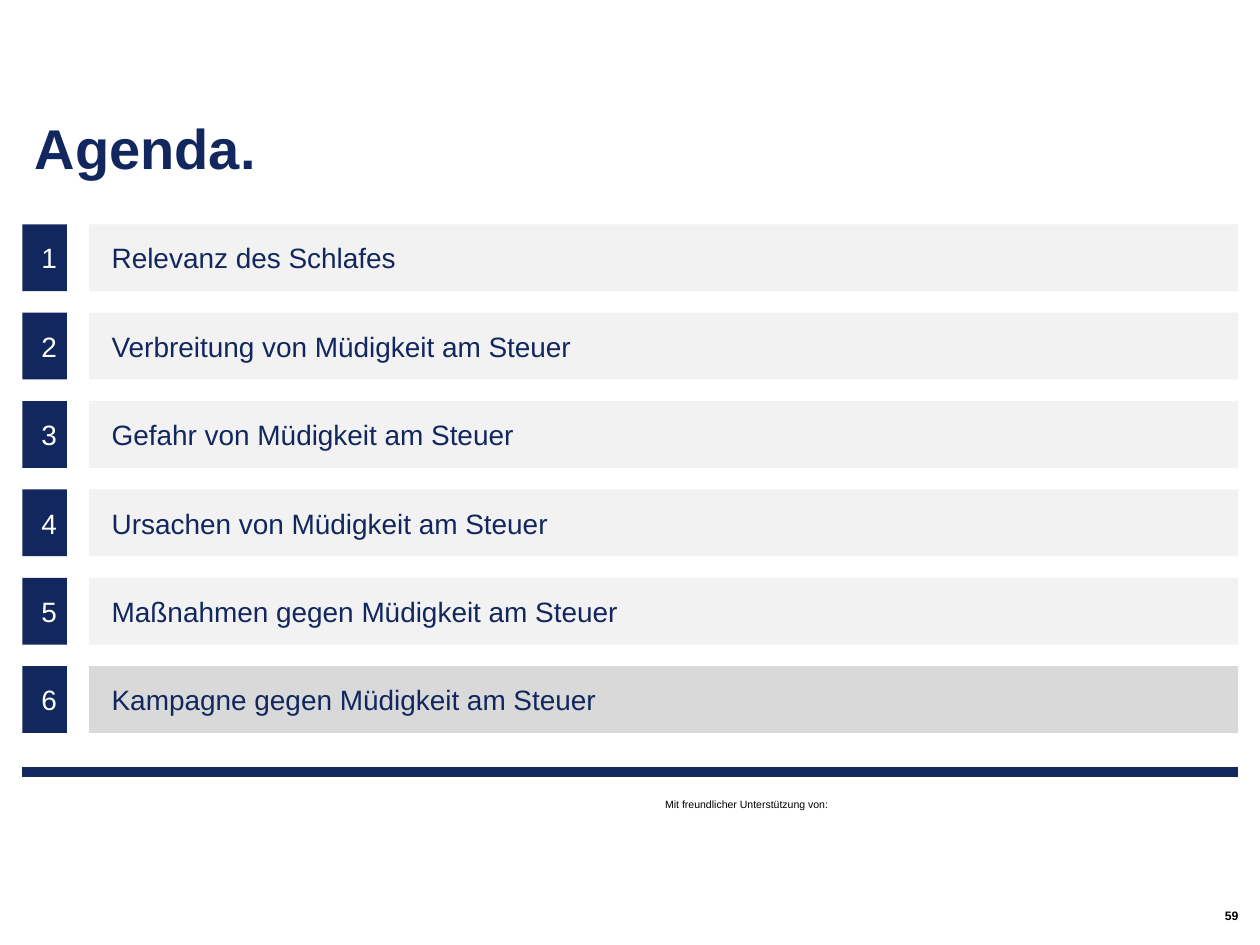
from lxml import etree
from pptx import Presentation
from pptx.dml.color import RGBColor
from pptx.enum.shapes import MSO_CONNECTOR, MSO_SHAPE
from pptx.enum.text import MSO_ANCHOR, PP_ALIGN
from pptx.oxml.ns import qn
from pptx.util import Pt

NAVY = RGBColor(0x11, 0x27, 0x5D)
LIGHT_GREY = RGBColor(0xF2, 0xF2, 0xF2)
MID_GREY = RGBColor(0xD9, 0xD9, 0xD9)
WHITE = RGBColor(0xFF, 0xFF, 0xFF)
BLACK = RGBColor(0, 0, 0)

LEFT, RIGHT = PP_ALIGN.LEFT, PP_ALIGN.RIGHT
TOP, MIDDLE, BOTTOM = MSO_ANCHOR.TOP, MSO_ANCHOR.MIDDLE, MSO_ANCHOR.BOTTOM
RECTANGLE, STRAIGHT = MSO_SHAPE.RECTANGLE, MSO_CONNECTOR.STRAIGHT

FONT = "Arial"
MARGIN = 12.8
BAR_LEFT, BAR_WIDTH = 51, 656.6
BADGE_WIDTH = 25.4
ROW_TOP, ROW_HEIGHT, ROW_PITCH = 128.2, 38.2, 50.5

TOPICS = [
    "Relevanz des Schlafes",
    "Verbreitung von Müdigkeit am Steuer",
    "Gefahr von Müdigkeit am Steuer",
    "Ursachen von Müdigkeit am Steuer",
    "Maßnahmen gegen Müdigkeit am Steuer",
    "Kampagne gegen Müdigkeit am Steuer",
]
CURRENT = 6


def set_text(sp, text, *, size, color=NAVY, bold=False, align=LEFT, anchor=MIDDLE,
             inset_x=7.2, inset_y=3.6, space_after=0, line_spacing=1.0):
    tf = sp.text_frame
    tf.word_wrap = True
    tf.vertical_anchor = anchor
    tf.margin_left = tf.margin_right = Pt(inset_x)
    tf.margin_top = tf.margin_bottom = Pt(inset_y)
    p = tf.paragraphs[0]
    p.alignment = align
    p.space_after = Pt(space_after)
    p.line_spacing = line_spacing
    r = p.add_run()
    r.text = text
    r.font.name = FONT
    r.font.size = Pt(size)
    r.font.bold = bold
    r.font.color.rgb = color


def add_label(s, text, left, top, width, height, **fmt):
    sp = s.shapes.add_textbox(Pt(left), Pt(top), Pt(width), Pt(height))
    set_text(sp, text, **fmt)


def add_block(s, text, left, top, width, fill, **fmt):
    sp = s.shapes.add_shape(RECTANGLE, Pt(left), Pt(top), Pt(width), Pt(ROW_HEIGHT))
    sp.shadow.inherit = False
    sp.fill.solid()
    sp.fill.fore_color.rgb = fill
    sp.line.fill.background()
    set_text(sp, text, size=16, space_after=8, **fmt)


def add_agenda_row(s, number, topic):
    top = ROW_TOP + (number - 1) * ROW_PITCH
    add_block(s, str(number), MARGIN, top, BADGE_WIDTH, NAVY,
              color=WHITE, align=RIGHT, inset_x=5.7)
    fill = MID_GREY if number == CURRENT else LIGHT_GREY
    add_block(s, topic, BAR_LEFT, top, BAR_WIDTH, fill, inset_x=12.8)


def add_rule(s, left, right, y):
    line = s.shapes.add_connector(STRAIGHT, Pt(left), Pt(y), Pt(right), Pt(y))
    line.line.color.rgb = NAVY
    line.line.width = Pt(5.67)
    etree.SubElement(line._element.spPr, qn("a:effectLst"))


def main():
    prs = Presentation()
    prs.slide_width, prs.slide_height = Pt(720), Pt(540)
    s = prs.slides.add_slide(prs.slide_layouts[6])

    add_rule(s, MARGIN, 707.2, 441.2)
    add_label(s, "Mit freundlicher Unterstützung von:", 373, 452.2, 146, 14.4,
              size=6, color=BLACK, anchor=TOP)
    add_label(s, "Agenda.", MARGIN, 28, 694.8, 75.6, size=32, bold=True,
              anchor=BOTTOM, inset_y=0, line_spacing=0.9)
    add_label(s, "59", 464.4, 517.7, 243.2, 11.5, size=7, color=BLACK, bold=True,
              align=RIGHT, inset_x=0, inset_y=0)
    for number, topic in enumerate(TOPICS, 1):
        add_agenda_row(s, number, topic)

    prs.save("out.pptx")


if __name__ == "__main__":
    main()
